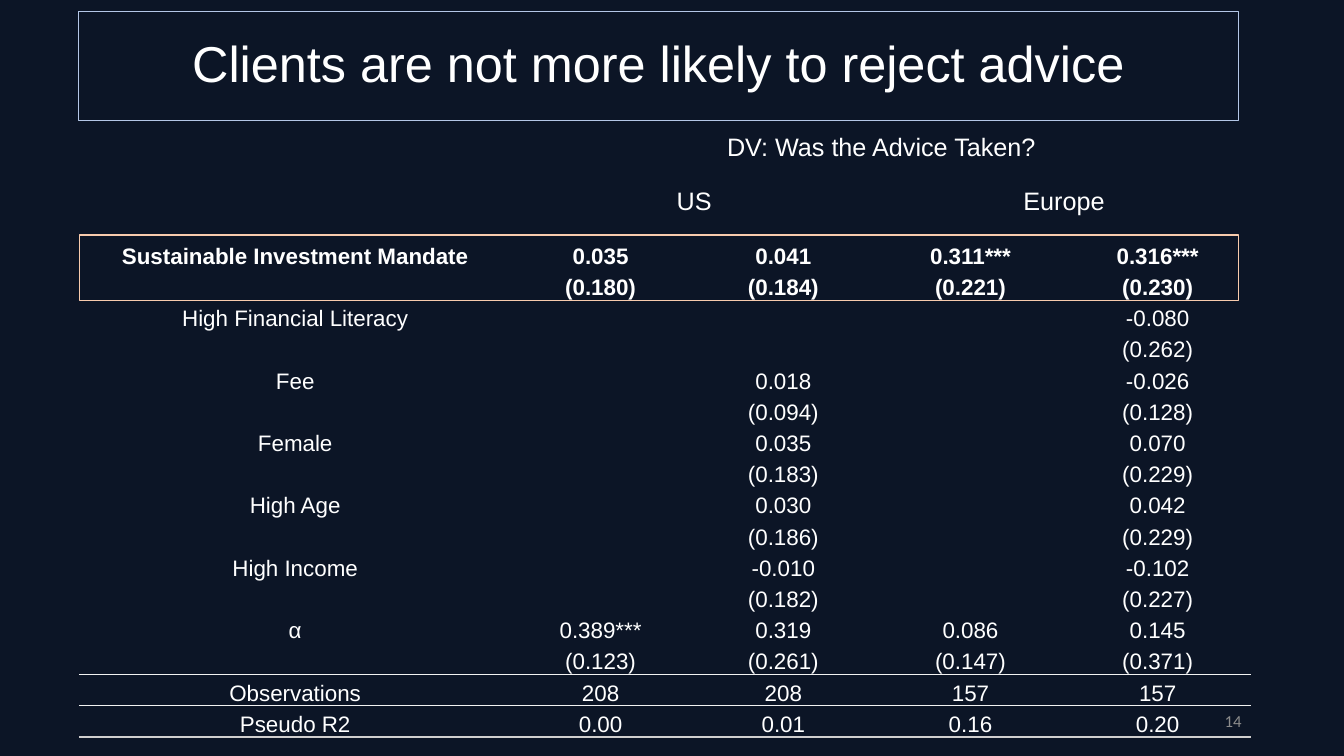
from lxml import etree
from pptx import Presentation
from pptx.dml.color import RGBColor
from pptx.enum import shapes, text
from pptx.oxml import ns
from pptx.util import Pt

# Content
TITLE = "Clients are not more likely to reject advice"
PAGE = "14"
ROWS = [
    ("", "DV: Was the Advice Taken?", "", "", ""),
    ("", "US", "", "Europe", ""),
    ("Sustainable Investment Mandate", "0.035", "0.041", "0.311***", "0.316***"),
    ("", "(0.180)", "(0.184)", "(0.221)", "(0.230)"),
    ("High Financial Literacy", "", "", "", "-0.080"),
    ("", "", "", "", "(0.262)"),
    ("Fee", "", "0.018", "", "-0.026"),
    ("", "", "(0.094)", "", "(0.128)"),
    ("Female", "", "0.035", "", "0.070"),
    ("", "", "(0.183)", "", "(0.229)"),
    ("High Age", "", "0.030", "", "0.042"),
    ("", "", "(0.186)", "", "(0.229)"),
    ("High Income", "", "-0.010", "", "-0.102"),
    ("", "", "(0.182)", "", "(0.227)"),
    ("α", "0.389***", "0.319", "0.086", "0.145"),
    ("", "(0.123)", "(0.261)", "(0.147)", "(0.371)"),
    ("Observations", "208", "208", "157", "157"),
    ("Pseudo R2", "0.00", "0.01", "0.16", "0.20"),
    ("", "", "", "", ""),
]
MERGES = [((0, 1), (0, 4)), ((1, 1), (1, 2)), ((1, 3), (1, 4)), ((18, 0), (18, 4))]
HEADER_ROWS, MANDATE_ROWS = (0, 1), (2, 3)
RULES = {15: "rule", 17: "end_rule"}  # line below these rows

COLORS = {
    "background": "0C1526", "text": "FFFFFF", "page": "8C8C8C",
    "title_frame": "B4C7E7", "highlight": "F8CBAD",
    "rule": "F2F2F2", "end_rule": "D0CECE",
}
COLUMN_WIDTHS = [308.9, 127.4, 133.7, 133.7, 133.7]
ROW_HEIGHTS = [38.2] * 2 + [22.3] * 16 + [43.9]
NO_GRID_STYLE = "{2D5ABB26-0587-4C30-8999-92F81FD0307C}"


def color(name):
    return RGBColor.from_string(COLORS[name])


def style(paragraph, size, align, ink="text", face="Arial", bold=False):
    paragraph.alignment = align
    font = paragraph.font
    font.size, font.name, font.bold = Pt(size), face, bold
    font.color.rgb = color(ink)


def add_frame(left, top, width, height, line, weight):
    frame = slide.shapes.add_shape(shapes.MSO_SHAPE.RECTANGLE,
                                   Pt(left), Pt(top), Pt(width), Pt(height))
    frame.shadow.inherit = False
    frame.fill.background()
    frame.line.color.rgb = color(line)
    frame.line.width = Pt(weight)
    return frame


def add_border(cell, side, name):
    properties = cell._tc.get_or_add_tcPr()
    line = etree.Element(ns.qn(f"a:{side}"), w=str(Pt(1)))
    fill = etree.SubElement(line, ns.qn("a:solidFill"))
    etree.SubElement(fill, ns.qn("a:srgbClr"), val=COLORS[name])
    properties.insert(0, line)


deck = Presentation()
deck.slide_width, deck.slide_height = Pt(960), Pt(540)
slide = deck.slides.add_slide(deck.slide_layouts[6])
slide.background.fill.solid()
slide.background.fill.fore_color.rgb = color("background")

# Page number
page = slide.shapes.add_textbox(Pt(678), Pt(500.5), Pt(216), Pt(28.75)).text_frame
page.word_wrap = True
page.vertical_anchor = text.MSO_ANCHOR.MIDDLE
page.text = PAGE
style(page.paragraphs[0], 12, text.PP_ALIGN.RIGHT, "page", "Calibri")

# Regression table
results_frame = slide.shapes.add_table(
    len(ROWS), len(COLUMN_WIDTHS), Pt(56.4), Pt(86.4),
    Pt(sum(COLUMN_WIDTHS)), Pt(sum(ROW_HEIGHTS)))
results = results_frame.table
results.first_row = results.horz_banding = False
results._tbl.tblPr.find(ns.qn("a:tableStyleId")).text = NO_GRID_STYLE
for column, width in zip(results.columns, COLUMN_WIDTHS):
    column.width = Pt(width)
for row, height in zip(results.rows, ROW_HEIGHTS):
    row.height = Pt(height)
for start, end in MERGES:
    results.cell(*start).merge(results.cell(*end))

for r, values in enumerate(ROWS):
    header = r in HEADER_ROWS
    size = 18 if header else 16
    for c, value in enumerate(values):
        cell = results.cell(r, c)
        cell.fill.background()
        cell.margin_left = cell.margin_top = cell.margin_right = Pt(0.7)
        cell.margin_bottom = 0
        cell.vertical_anchor = (text.MSO_ANCHOR.MIDDLE if header
                                else text.MSO_ANCHOR.BOTTOM)
        paragraph = cell.text_frame.paragraphs[0]
        if value:
            paragraph.text = value
        else:  # keeps empty cells from stretching their row
            paragraph._p.get_or_add_endParaRPr().set("sz", str(size * 100))
        style(paragraph, size, text.PP_ALIGN.CENTER, bold=r in MANDATE_ROWS)
        if r in RULES:
            add_border(cell, "lnB", RULES[r])
        if r - 1 in RULES:
            add_border(cell, "lnT", RULES[r - 1])
results.cell(MANDATE_ROWS[0], 0).text_frame.paragraphs[0].line_spacing = 1.5

# Title
title = add_frame(56.4, 8.4, 828, 78, "title_frame", 0.75).text_frame
title.word_wrap = True
title.vertical_anchor = text.MSO_ANCHOR.MIDDLE
title.text = TITLE
title.paragraphs[0].line_spacing = 0.9
style(title.paragraphs[0], 36, text.PP_ALIGN.CENTER)

# Highlight around the mandate rows
add_frame(56.6, 168, 828, 46.6, "highlight", 1)

deck.save("out.pptx")
